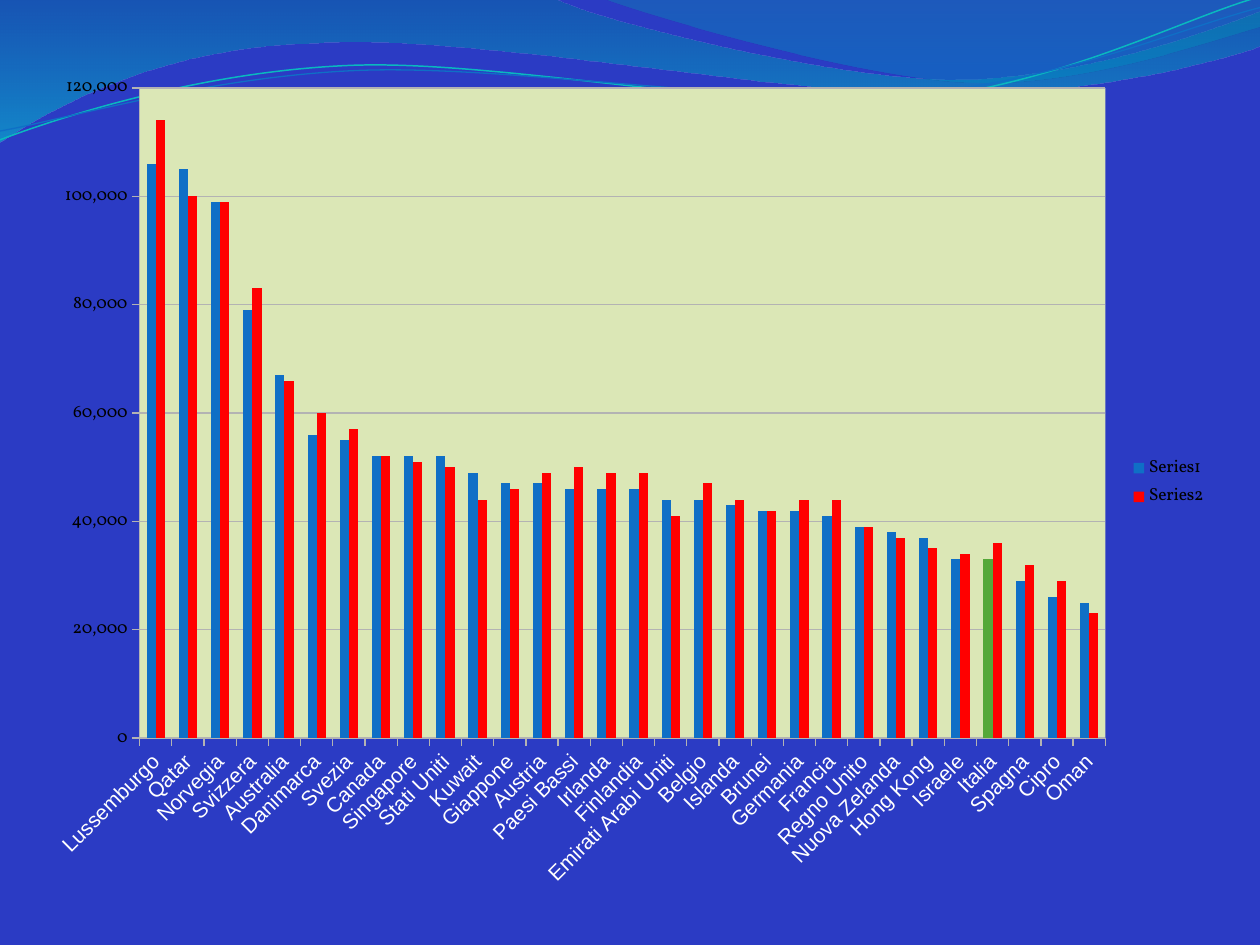
from lxml import etree
from pptx import Presentation
from pptx.chart.data import CategoryChartData
from pptx.dml.color import RGBColor
from pptx.enum.chart import XL_CHART_TYPE, XL_LEGEND_POSITION, XL_TICK_MARK
from pptx.oxml import parse_xml
from pptx.oxml.ns import nsdecls, qn
from pptx.util import Inches, Pt

COLUMNS = XL_CHART_TYPE.COLUMN_CLUSTERED
RIGHT = XL_LEGEND_POSITION.RIGHT
OUTSIDE = XL_TICK_MARK.OUTSIDE
NO_BREAK_SPACE = chr(160)
UNITS = 1000  # freeform units to the inch

COLORS = {"background": "2B3BC4", "plot": "DBE7B6", "grid": "B3B3B3",
          "blue": "0F6FC6", "red": "FF0000", "italy": "55A839",
          "teal": "0AB8BF", "labels": "FFFFFF", "text": "000000"}

# country, first series, second series (thousands)
DATA = [
    ("Lussemburgo", 106, 114), ("Qatar", 105, 100), ("Norvegia", 99, 99),
    ("Svizzera", 79, 83), ("Australia", 67, 66), ("Danimarca", 56, 60),
    ("Svezia", 55, 57), ("Canada", 52, 52), ("Singapore", 52, 51),
    ("Stati Uniti", 52, 50), ("Kuwait", 49, 44), ("Giappone", 47, 46),
    ("Austria", 47, 49), ("Paesi Bassi", 46, 50), ("Irlanda", 46, 49),
    ("Finlandia", 46, 49), ("Emirati Arabi Uniti", 44, 41), ("Belgio", 44, 47),
    ("Islanda", 43, 44), ("Brunei", 42, 42), ("Germania", 42, 44),
    ("Francia", 41, 44), ("Regno Unito", 39, 39), ("Nuova Zelanda", 38, 37),
    ("Hong Kong", 37, 35), ("Israele", 33, 34), ("Italia", 33, 36),
    ("Spagna", 29, 32), ("Cipro", 26, 29), ("Oman", 25, 23),
]
SERIES = [("Series1", "blue"), ("Series2", "red")]
PLOT_LAYOUT = {"x": 0.093, "y": 0.034, "w": 0.811, "h": 0.768}

# Outlines in inches: a pair is a line's end, six numbers are a Bézier curve.
# Gradient stops are position %, colour, opacity %.
WAVES = [
    ([(0, 0), (4.4, -0.01), (4.76, 0.17, 6.64, 0.63, 7.58, 0.63),
      (8.53, 0.63, 9.58, 0.26, 10, 0.09), (10.01, 0.36),
      (9.83, 0.44, 8.7, 0.76, 7.46, 0.75), (6.22, 0.75, 3.82, 0.28, 2.57, 0.34),
      (1.29, 0.36, 0.46, 0.83, -0.01, 1.13)],
     [(0, "0074A1", 45), (100, "00C6CF", 55)]),
    ([(4.79, -0.01), (5.09, 0.11, 6.82, 0.62, 7.69, 0.65),
      (8.56, 0.69, 9.61, 0.32, 10, 0.21), (10, 0)],
     [(0, "00A1A9", 30), (80, "008BBF", 45)]),
]
STRANDS = [
    ([(0, 1.11), (0.48, 0.93, 1.58, 0.57, 2.77, 0.52),
      (3.95, 0.47, 5.93, 0.89, 7.13, 0.8), (8.33, 0.71, 9.38, 0.15, 9.98, -0.02)],
     "teal", 0.85),
    ([(0, 1.04), (0.47, 0.96, 1.64, 0.61, 2.83, 0.56),
      (4.03, 0.51, 5.97, 0.84, 7.17, 0.75), (8.36, 0.67, 9.41, 0.21, 10, 0.06)],
     "blue", 0.75),
]


def rgb(name):
    return RGBColor.from_string(COLORS[name])


def add_outline(s, outline, close):
    """Draw straight segments between the ends, then bend those that are curves."""
    parts = [[round(v * UNITS) for v in part] for part in outline]
    ends = [part[-2:] for part in parts]
    left, top = (min(values) for values in zip(*ends))
    builder = s.shapes.build_freeform(*ends[0], scale=Inches(1) / UNITS)
    builder.add_line_segments(ends[1:], close=close)
    shape = builder.convert_to_shape()
    segments = list(shape._element.iter(qn("a:lnTo")))
    for segment, part in zip(segments, parts[1:]):
        if len(part) == 6:
            curve = etree.Element(qn("a:cubicBezTo"))
            for x, y in zip(part[::2], part[1::2]):
                etree.SubElement(curve, qn("a:pt"), x=str(x - left), y=str(y - top))
            segment.getparent().replace(segment, curve)
    shape.shadow.inherit = False
    shape.fill.background()
    return shape


def fill_gradient(shape, stops):
    """Fill from top to bottom with partly transparent colours."""
    gs = "".join(f'<a:gs pos="{pos * 1000}"><a:srgbClr val="{color}">'
                 f'<a:alpha val="{alpha * 1000}"/></a:srgbClr></a:gs>'
                 for pos, color, alpha in stops)
    no_fill = shape._element.spPr.find(qn("a:noFill"))
    no_fill.getparent().replace(no_fill, parse_xml(
        f'<a:gradFill {nsdecls("a")} rotWithShape="1"><a:gsLst>{gs}</a:gsLst>'
        '<a:lin ang="5400000" scaled="0"/></a:gradFill>'))


def format_plot_area(chart):
    """Place the inner plot area and give it its fill."""
    area = chart._chartSpace.chart.plotArea
    for old in area.findall(qn("c:layout")):
        area.remove(old)
    layout = etree.Element(qn("c:layout"))
    manual = etree.SubElement(layout, qn("c:manualLayout"))
    settings = {"layoutTarget": "inner", "xMode": "edge", "yMode": "edge", **PLOT_LAYOUT}
    for tag, value in settings.items():
        etree.SubElement(manual, qn(f"c:{tag}")).set("val", str(value))
    area.insert(0, layout)
    area.append(parse_xml(
        f'<c:spPr {nsdecls("c", "a")}><a:solidFill><a:srgbClr val="{COLORS["plot"]}"/>'
        '</a:solidFill><a:ln><a:noFill/></a:ln></c:spPr>'))


def set_font(font, name, size, color):
    font.name, font.size = name, Pt(size)
    font.color.rgb = rgb(color)


def add_country_chart(s):
    data = CategoryChartData(number_format="#,##0")
    data.categories = [NO_BREAK_SPACE + row[0] for row in DATA]
    for i, (name, _) in enumerate(SERIES, 1):
        data.add_series(name, [row[i] * 1000 for row in DATA])
    chart = s.shapes.add_chart(COLUMNS, Inches(0.23), Inches(0.47),
                               Inches(9.45), Inches(6.72), data).chart
    chart.has_title = False
    set_font(chart.font, "Vollkorn", 10, "text")
    chart.has_legend = True
    chart.legend.position = RIGHT
    chart.legend.include_in_layout = False

    plot = chart.plots[0]
    plot.vary_by_categories = False
    plot.gap_width, plot.overlap = 150, 0
    for series, (_, color) in zip(plot.series, SERIES):
        series.format.fill.solid()
        series.format.fill.fore_color.rgb = rgb(color)
    italy = [row[0] for row in DATA].index("Italia")
    fill = plot.series[0].points[italy].format.fill
    fill.solid()
    fill.fore_color.rgb = rgb("italy")

    countries, values = chart.category_axis, chart.value_axis
    for axis in (countries, values):
        axis.major_tick_mark = OUTSIDE
        axis.format.line.color.rgb = rgb("grid")
    set_font(countries.tick_labels.font, "Arial", 12, "labels")
    countries._element.find(qn("c:txPr")).find(qn("a:bodyPr")).set("rot", "-2700000")
    values.minimum_scale, values.maximum_scale, values.major_unit = 0, 120000, 20000
    values.tick_labels.number_format = "#,##0"
    values.tick_labels.number_format_is_linked = False
    values.major_gridlines.format.line.color.rgb = rgb("grid")
    format_plot_area(chart)


def main():
    prs = Presentation()
    prs.slide_width, prs.slide_height = Inches(10), Inches(7.5)
    s = prs.slides.add_slide(prs.slide_layouts[6])
    s.background.fill.solid()
    s.background.fill.fore_color.rgb = rgb("background")
    for outline, stops in WAVES:
        wave = add_outline(s, outline, close=True)
        fill_gradient(wave, stops)
        wave.line.fill.background()
    for outline, color, width in STRANDS:
        strand = add_outline(s, outline, close=False)
        strand.line.color.rgb = rgb(color)
        strand.line.width = Pt(width)
    add_country_chart(s)
    prs.save("out.pptx")


if __name__ == "__main__":
    main()
